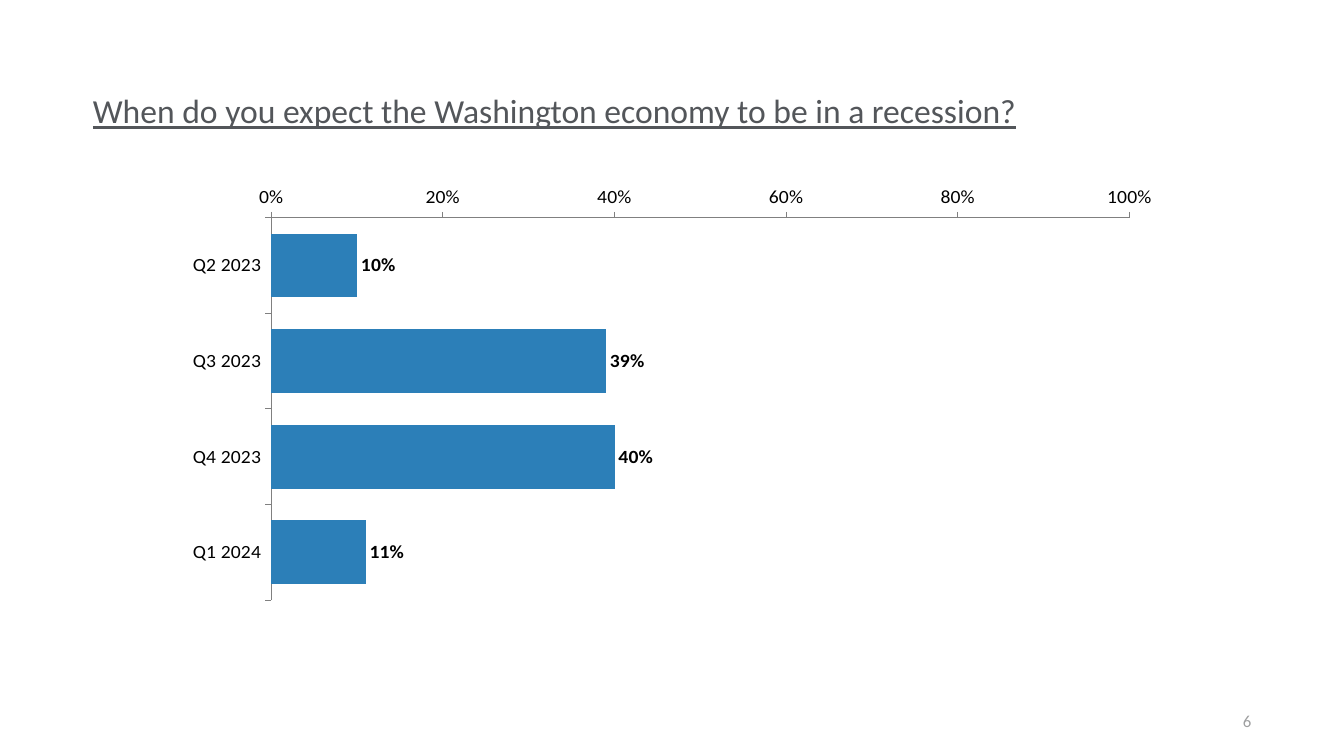
from lxml import etree
from pptx import Presentation
from pptx import util as u
from pptx.chart.data import CategoryChartData
from pptx.dml.color import RGBColor
from pptx.enum import chart as ch, text as tx
from pptx.oxml import parse_xml
from pptx.oxml.ns import nsdecls

FONT = "Calibri"
HEADING = RGBColor(0x53, 0x56, 0x5A)
PAGE_GREY = RGBColor(0x9E, 0x9F, 0xA0)
BAR_BLUE = RGBColor(0x2C, 0x7F, 0xB8)
AXIS_GREY = RGBColor(0x80, 0x80, 0x80)
BLACK = RGBColor(0, 0, 0)

FORECAST = {"Q2 2023": 0.10, "Q3 2023": 0.39, "Q4 2023": 0.40, "Q1 2024": 0.11}
# Plot area as shares of the chart box
PLOT_AREA = {"x": 0.1, "y": 0.02, "w": 0.86, "h": 0.89}


def style_font(font, size, color, bold=False):
    font.name = FONT
    font.size = u.Pt(size)
    font.color.rgb = color
    font.bold = bold


def place(shape, box):
    shape.left, shape.top, shape.width, shape.height = (u.Cm(side) for side in box)


def fill_text(shape, words, size, color, align, anchor):
    frame = shape.text_frame
    frame.text = words
    frame.word_wrap = True
    frame.auto_size = tx.MSO_AUTO_SIZE.NONE
    frame.vertical_anchor = anchor
    frame.margin_left = frame.margin_top = frame.margin_right = frame.margin_bottom = 0
    line = frame.paragraphs[0]
    line.alignment = align
    style_font(line.runs[0].font, size, color)
    return line


def add_question(slide, box):
    question = slide.shapes.title
    place(question, box)
    line = fill_text(question, "When do you expect the Washington economy to be in a recession?",
                     24, HEADING, tx.PP_ALIGN.LEFT, tx.MSO_ANCHOR.TOP)
    line.line_spacing = 0.9
    line.runs[0].font.underline = True


def add_page_number(slide, box):
    page_number = slide.shapes.add_textbox(*(u.Cm(side) for side in box))
    fill_text(page_number, "6", 12, PAGE_GREY, tx.PP_ALIGN.RIGHT, tx.MSO_ANCHOR.MIDDLE)


def fix_plot_area(chart):
    layout = parse_xml(f'<c:layout {nsdecls("c")}><c:manualLayout/></c:layout>')
    manual = layout[0]
    settings = {"layoutTarget": "inner", "xMode": "edge", "yMode": "edge", **PLOT_AREA}
    for tag, value in settings.items():
        etree.SubElement(manual, f"{{{layout.nsmap['c']}}}{tag}").set("val", str(value))
    plot_area = chart.plots[0]._element.getparent()
    for old in plot_area.findall(layout.tag):
        plot_area.remove(old)
    plot_area.insert(0, layout)


def add_forecast(slide, box):
    data = CategoryChartData(number_format="0%")
    data.categories = list(FORECAST)
    data.add_series("Series 1", list(FORECAST.values()))
    chart = slide.shapes.add_chart(
        ch.XL_CHART_TYPE.BAR_CLUSTERED, *(u.Cm(side) for side in box), data).chart
    chart.has_title = False
    chart.has_legend = False
    style_font(chart.font, 14, BLACK)
    fix_plot_area(chart)

    # Axes: quarters run downwards, percentages stay below the last quarter
    quarters, shares = chart.category_axis, chart.value_axis
    for axis in (quarters, shares):
        axis.has_major_gridlines = False
        axis.major_tick_mark = ch.XL_TICK_MARK.OUTSIDE
        axis.format.line.color.rgb = AXIS_GREY
        axis.format.line.width = u.Pt(0.75)
        style_font(axis.tick_labels.font, 14, BLACK)
    quarters.reverse_order = True
    quarters.crosses_at = len(FORECAST) + 1
    shares.minimum_scale, shares.maximum_scale, shares.major_unit = 0, 1, 0.2
    shares.tick_labels.number_format = "0%"
    shares.tick_labels.number_format_is_linked = False

    # Bars and their labels
    bars = chart.plots[0]
    bars.gap_width = 50
    bars.vary_by_categories = False
    fill = bars.series[0].format.fill
    fill.solid()
    fill.fore_color.rgb = BAR_BLUE
    bars.has_data_labels = True
    labels = bars.data_labels
    labels.show_value = True
    labels.number_format = "0%"
    labels.number_format_is_linked = False
    labels.position = ch.XL_LABEL_POSITION.OUTSIDE_END
    style_font(labels.font, 14, BLACK, bold=True)


def main():
    deck = Presentation()
    deck.slide_width, deck.slide_height = u.Cm(33.87), u.Cm(19.05)
    slide = deck.slides.add_slide(deck.slide_layouts[5])
    add_question(slide, (2.34, 2.39, 29.2, 2.3))
    add_page_number(slide, (23.92, 17.65, 7.62, 1.02))
    add_forecast(slide, (4.32, 4.67, 25.15, 11.43))
    deck.save("out.pptx")


if __name__ == "__main__":
    main()
